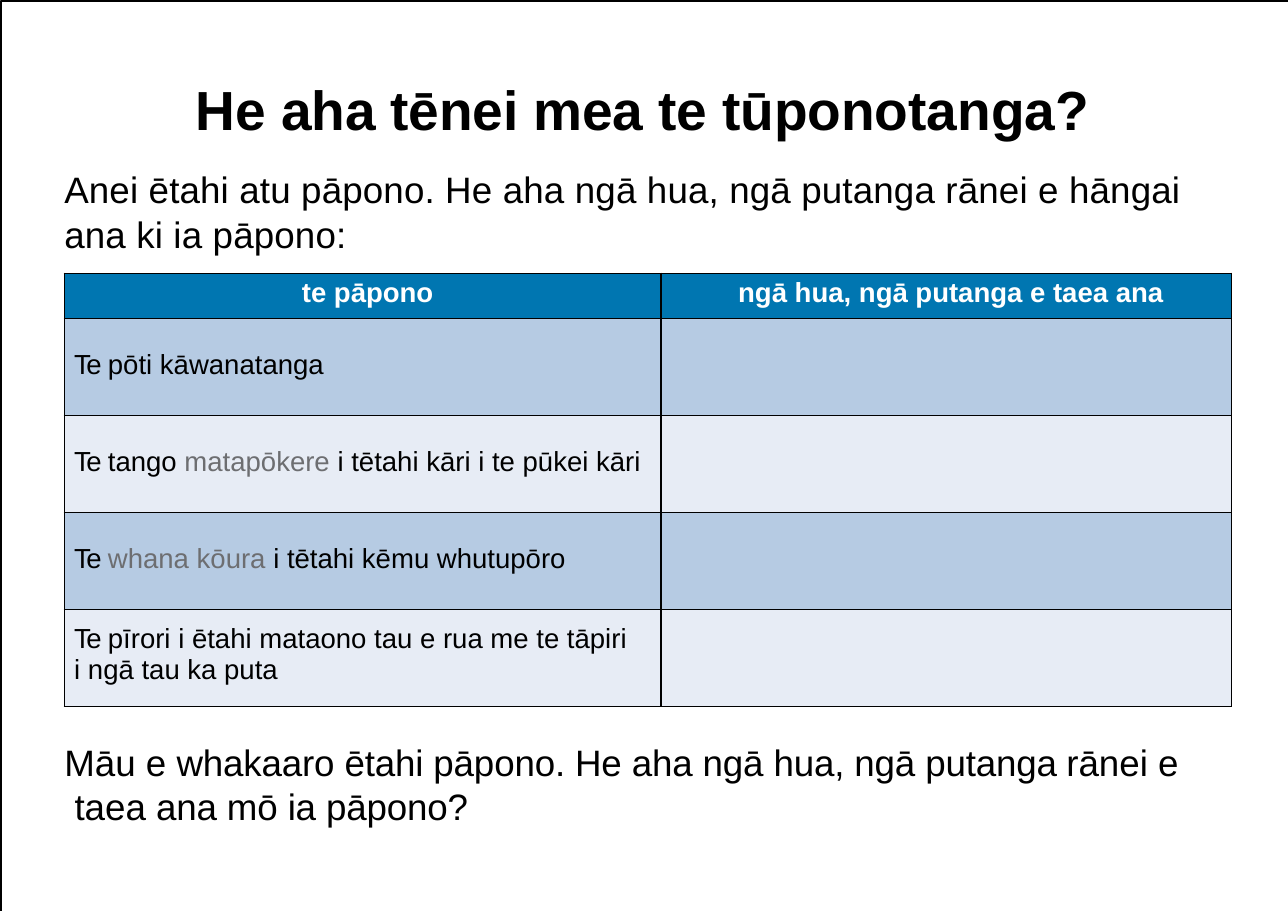
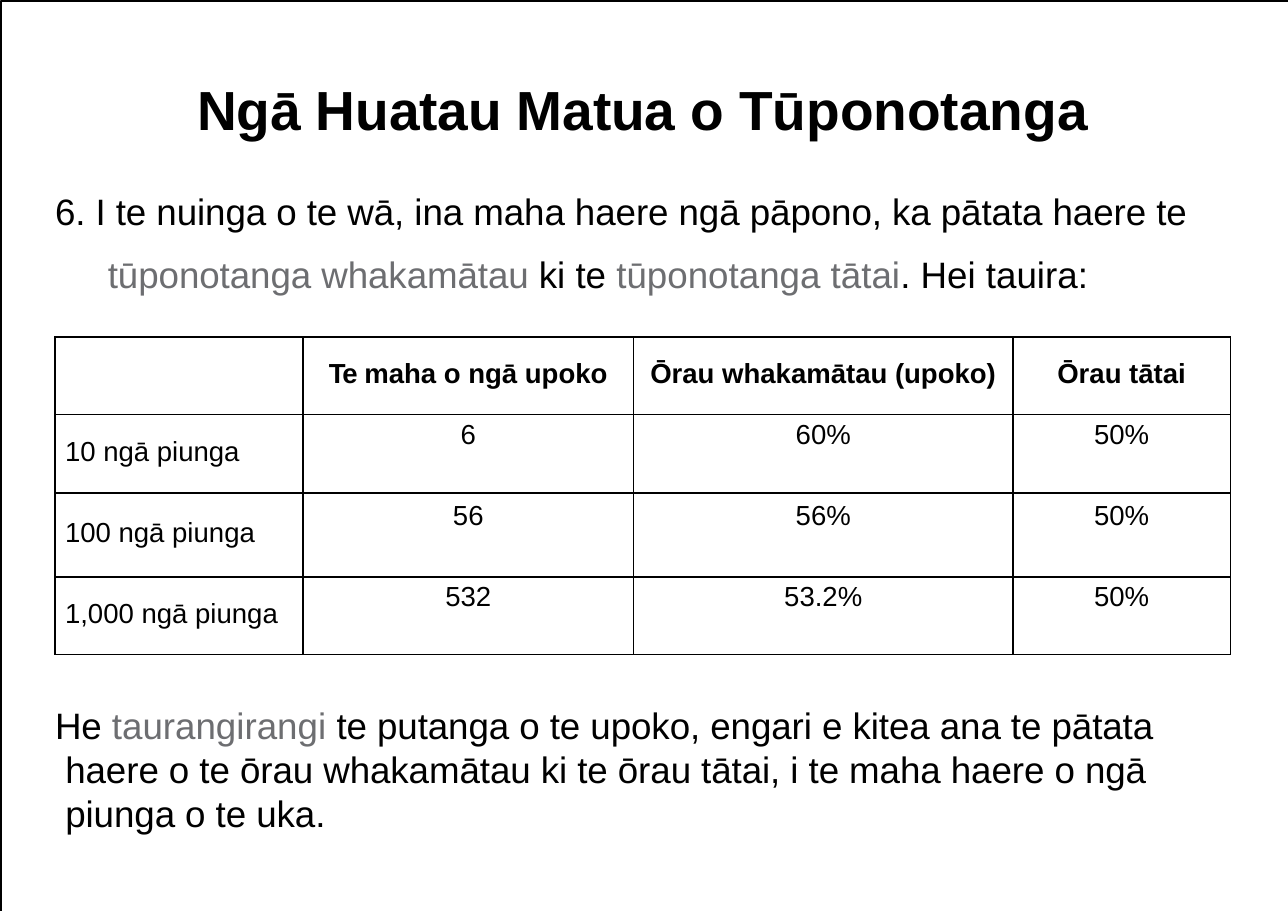
from dataclasses import dataclass
from typing import Any

import pptx
import pptx.dml.color
import pptx.enum.text
import pptx.oxml
import pptx.oxml.ns
import pptx.util

FONT = "Arial"
BLACK = "000000"
WHITE = "FFFFFF"
GLOSSARY_GREY = "6D6E71"
HEADER_BLUE = "0076B1"
BAND_BLUE = "B6CBE3"
BAND_PALE = "E7ECF5"

SLIDE_WIDTH, SLIDE_HEIGHT = 841.68, 595.44
TITLE_SIZE, BODY_SIZE, TABLE_SIZE = 36, 24, 18
CELL_INDENT = 6.5
LABEL_DROP = 10.8
LEFT = pptx.enum.text.PP_ALIGN.LEFT
CENTER = pptx.enum.text.PP_ALIGN.CENTER


@dataclass(frozen=True)
class Segment:
    text: str
    color: str = BLACK
    spacing: float = 0


@dataclass(frozen=True)
class TextBlock:
    left: float
    top: float
    width: float
    height: float
    segments: list[Segment]
    hanging: float = 0
    line_spacing: float = 1


@dataclass(frozen=True)
class Cell:
    segments: list[Segment]
    top: float = 0
    left: float = 0
    right: float = 0
    centered: bool = False
    bold: bool = False
    fill: str | None = None


@dataclass(frozen=True)
class Grid:
    left: float
    top: float
    columns: list[float]
    rows: list[float]
    cells: list[list[Cell]]


@dataclass(frozen=True)
class Page:
    title: list[Segment]
    intro: TextBlock
    grid: Grid
    closing: TextBlock


def rgb(color: str) -> pptx.dml.color.RGBColor:
    return pptx.dml.color.RGBColor.from_string(color)


def write_paragraph(paragraph: Any, segments: list[Segment], size: float,
                    bold: bool = False, align: Any = LEFT) -> None:
    paragraph.alignment = align
    for segment in segments:
        run = paragraph.add_run()
        run.text = segment.text
        run.font.name = FONT
        run.font.size = pptx.util.Pt(size)
        run.font.bold = bold
        run.font.color.rgb = rgb(segment.color)
        if segment.spacing:
            run.font._element.set("spc", str(round(segment.spacing * 100)))


def clear_frame(frame: Any) -> None:
    frame.margin_left = frame.margin_right = 0
    frame.margin_top = frame.margin_bottom = 0
    frame.vertical_anchor = pptx.enum.text.MSO_ANCHOR.TOP
    frame.auto_size = pptx.enum.text.MSO_AUTO_SIZE.NONE
    frame.word_wrap = True


def add_title(slide: Any, segments: list[Segment]) -> None:
    frame = slide.shapes.title.text_frame
    clear_frame(frame)
    frame.word_wrap = False
    write_paragraph(frame.paragraphs[0], segments, TITLE_SIZE, True, CENTER)


def add_text_block(slide: Any, block: TextBlock) -> None:
    shape = slide.shapes.add_textbox(
        *map(pptx.util.Pt, (block.left, block.top, block.width, block.height)))
    clear_frame(shape.text_frame)
    paragraph = shape.text_frame.paragraphs[0]
    paragraph.line_spacing = block.line_spacing
    if block.hanging:
        properties = paragraph._p.get_or_add_pPr()
        properties.set("marL", str(pptx.util.Pt(block.hanging)))
        properties.set("indent", str(pptx.util.Pt(-block.hanging)))
    write_paragraph(paragraph, block.segments, BODY_SIZE)


def add_borders(cell: Any) -> None:
    properties = cell._tc.get_or_add_tcPr()
    for side in ("lnL", "lnR", "lnT", "lnB"):
        properties.append(pptx.oxml.parse_xml(
            f'<a:{side} {pptx.oxml.ns.nsdecls("a")} w="12700"><a:solidFill>'
            f'<a:srgbClr val="{BLACK}"/></a:solidFill></a:{side}>'))


def fill_cell(cell: Any, content: Cell) -> None:
    add_borders(cell)
    if content.fill:
        cell.fill.solid()
        cell.fill.fore_color.rgb = rgb(content.fill)
    else:
        cell.fill.background()
    cell.margin_left = pptx.util.Pt(content.left)
    cell.margin_right = pptx.util.Pt(content.right)
    cell.margin_top = pptx.util.Pt(content.top)
    cell.margin_bottom = 0
    write_paragraph(cell.text_frame.paragraphs[0], content.segments, TABLE_SIZE,
                    content.bold, CENTER if content.centered else LEFT)


def add_grid(slide: Any, grid: Grid) -> None:
    table = slide.shapes.add_table(
        len(grid.rows), len(grid.columns),
        *map(pptx.util.Pt, (grid.left, grid.top, sum(grid.columns), sum(grid.rows)))).table
    for column, width in zip(table.columns, grid.columns):
        column.width = pptx.util.Pt(width)
    for row, height, contents in zip(table.rows, grid.rows, grid.cells):
        row.height = pptx.util.Pt(height)
        for cell, content in zip(row.cells, contents):
            fill_cell(cell, content)


def place_layout_title(layout: Any) -> None:
    title = layout.placeholders[0]
    title.left, title.top, title.width, title.height = map(
        pptx.util.Pt, (126, 49.5, 588, 44))


def add_layout_frame(layout: Any, slide: Any) -> None:
    edge = pptx.util.Pt(0.7)
    right, bottom = pptx.util.Pt(SLIDE_WIDTH), pptx.util.Pt(SLIDE_HEIGHT)
    builder = slide.shapes.build_freeform(right, edge)
    builder.add_line_segments([(edge, edge), (edge, bottom)], close=False)
    shape = builder.convert_to_shape()
    shape.shadow.inherit = False
    shape.fill.background()
    shape.line.color.rgb = rgb(BLACK)
    shape.line.width = pptx.util.Pt(1)
    layout.shapes._spTree.append(shape._element)


def event_row(segments: list[Segment], fill: str, top: float = 20.1,
              right: float = 0) -> list[Cell]:
    event = Cell([Segment("Te ", spacing=-1), *segments], top, CELL_INDENT, right, fill=fill)
    return [event, Cell([], fill=fill)]


def heading(segments: list[Segment]) -> Cell:
    return Cell(segments, 13.8, centered=True, bold=True)


def toss_row(label: str, values: list[str], top: float) -> list[Cell]:
    return [Cell([Segment(label)], top + LABEL_DROP, CELL_INDENT),
            *(Cell([Segment(value)], top, centered=True) for value in values)]


EVENTS_PAGE = Page(
    title=[Segment("He aha tēnei mea te ", spacing=-0.1), Segment("tūponotanga?")],
    intro=TextBlock(42, 109.3, 741, 59, [
        Segment("Anei ētahi atu pāpono. He aha ngā hua, ngā putanga rānei e hāngai "
                "ana ki ia pāpono:", spacing=0.1)]),
    grid=Grid(42, 178.6, [390, 373], [29.5] + [63.4] * 4, [
        [Cell([Segment("te pāpono", WHITE)], 3.1, CELL_INDENT,
              centered=True, bold=True, fill=HEADER_BLUE),
         Cell([Segment("ngā hua, ngā putanga e taea ana", WHITE)], 3.1, 50.4,
              bold=True, fill=HEADER_BLUE)],
        event_row([Segment("pōti kāwanatanga")], BAND_BLUE),
        event_row([Segment("tango "), Segment("matapōkere ", GLOSSARY_GREY),
                   Segment("i tētahi kāri i te pūkei kāri")], BAND_PALE),
        event_row([Segment("whana kōura ", GLOSSARY_GREY),
                   Segment("i tētahi kēmu whutupōro")], BAND_BLUE),
        event_row([Segment("pīrori i ētahi mataono tau e rua me te tāpiri "
                           "i ngā tau ka puta")], BAND_PALE, 9.4, 20),
    ]),
    closing=TextBlock(42, 483.7, 738, 59, [
        Segment("Māu e "),
        Segment("whakaaro ētahi pāpono. He aha ngā hua, ngā putanga ", spacing=-0.1),
        Segment("rānei e taea "),
        Segment("ana mō ia pāpono?", spacing=-0.1)], hanging=6.7),
)

TOSSES_PAGE = Page(
    title=[Segment("Ngā Huatau Matua ", spacing=-0.1), Segment("o Tūponotanga")],
    intro=TextBlock(36, 111.4, 746, 84, [
        Segment("6. I te nuinga o te wā, ina maha haere ngā pāpono, ka pātata haere te ",
                spacing=-0.05),
        Segment("tūponotanga whakamātau ", GLOSSARY_GREY, -0.05),
        Segment("ki te "),
        Segment("tūponotanga tātai", GLOSSARY_GREY),
        Segment(". Hei tauira:")], hanging=34.5, line_spacing=1.42),
    grid=Grid(36, 220.3, [162, 216, 248, 142], [50.4, 51.6, 54.9, 50.4], [
        [Cell([]),
         heading([Segment("Te ", spacing=-0.7), Segment("maha o ngā upoko")]),
         heading([Segment("Ōrau whakamātau (upoko)")]),
         heading([Segment("Ōrau tātai")])],
        toss_row("10 ngā piunga", ["6", "60%", "50%"], 3.6),
        toss_row("100 ngā piunga", ["56", "56%", "50%"], 5.1),
        toss_row("1,000 ngā piunga", ["532", "53.2%", "50%"], 3),
    ]),
    closing=TextBlock(36, 459.2, 724, 88, [
        Segment("He ", spacing=-0.1),
        Segment("taurangirangi ", GLOSSARY_GREY),
        Segment("te putanga o te upoko, engari e kitea ana te pātata haere o te ōrau "
                "whakamātau ki te ōrau tātai, i te maha haere o ngā piunga o te uka.",
                spacing=-0.05)], hanging=6.7),
)


def main() -> None:
    presentation = pptx.Presentation()
    presentation.slide_width = pptx.util.Pt(SLIDE_WIDTH)
    presentation.slide_height = pptx.util.Pt(SLIDE_HEIGHT)
    layout = presentation.slide_layouts.get_by_name("Title Only")
    place_layout_title(layout)
    for page in (EVENTS_PAGE, TOSSES_PAGE):
        slide = presentation.slides.add_slide(layout)
        add_title(slide, page.title)
        add_text_block(slide, page.intro)
        add_grid(slide, page.grid)
        add_text_block(slide, page.closing)
    add_layout_frame(layout, presentation.slides[0])
    presentation.save("out.pptx")


if __name__ == "__main__":
    main()
